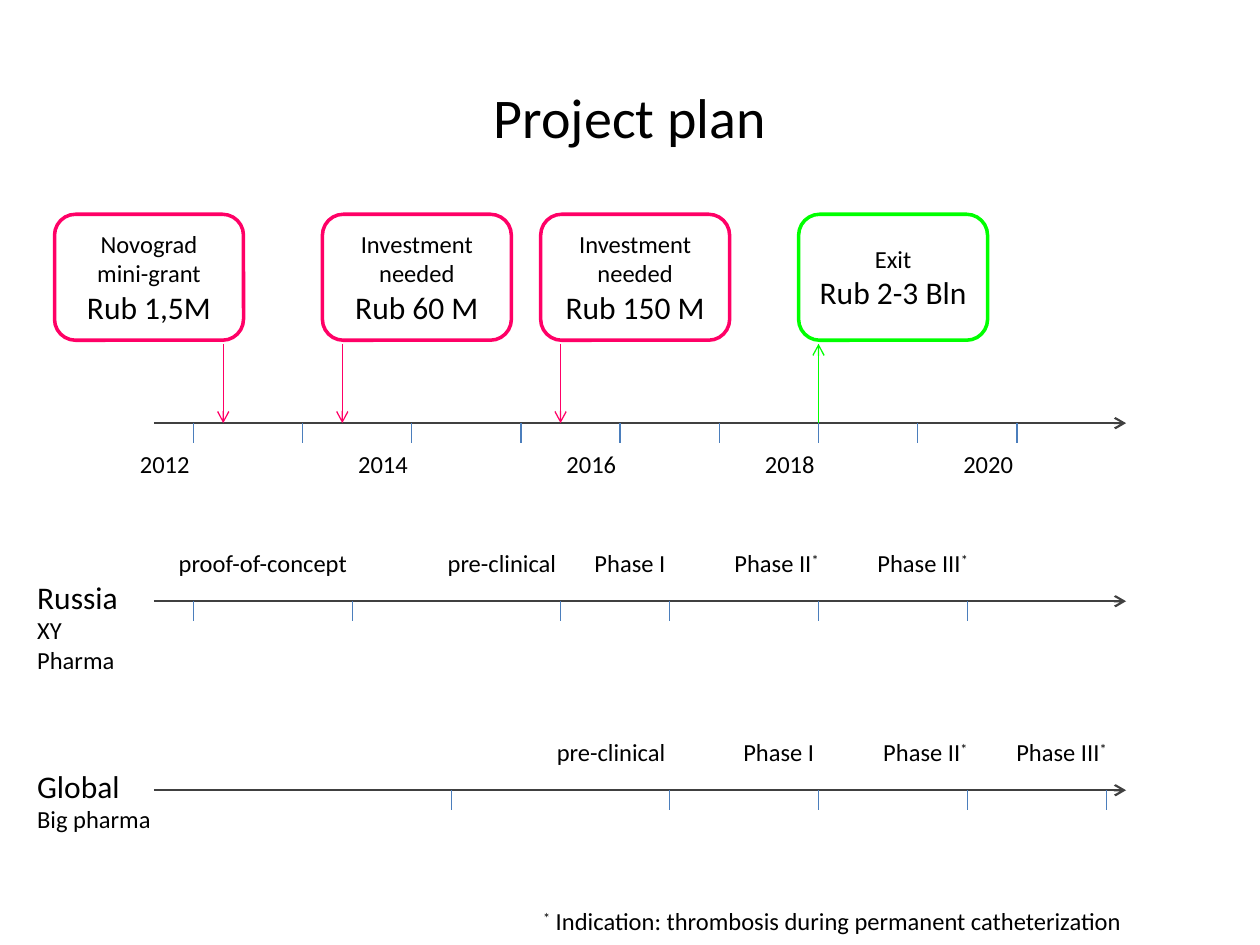
from dataclasses import dataclass

from lxml.etree import SubElement
from pptx import Presentation
from pptx.dml.color import RGBColor
from pptx.enum.shapes import MSO_CONNECTOR, MSO_SHAPE
from pptx.enum.text import MSO_ANCHOR, MSO_AUTO_SIZE, PP_ALIGN
from pptx.oxml.ns import qn
from pptx.util import Cm, Inches, Pt

BLACK, GREY, BLUE = "000000", "404040", "4B7EBC"
PINK, GREEN = "FF0066", "00FF00"
LEFT, RIGHT, TICK = 3.1, 22.7, 0.4
TIME, BOX_TOP, BOX_W, BOX_H = 8.53, 4.32, 3.81, 2.54
WIDTHS = {"proof-of-concept": 3.96, "pre-clinical": 2.72, "Phase I": 1.96,
          "Phase II*": 2.33, "Phase III*": 2.44}


@dataclass
class Deal:
    col: float
    stem: float
    head: str
    sum: str
    hue: str = PINK
    out: bool = False


@dataclass
class Track:
    row: float
    name: str
    firm: str
    start: float
    width: float
    steps: dict[float, str]


DEALS = [
    Deal(1.1, 4.5, "Novograd mini-grant", "Rub 1,5M"),
    Deal(6.5, 6.9, "Investment needed", "Rub 60 M"),
    Deal(10.9, 11.3, "Investment needed", "Rub 150 M"),
    Deal(16.1, 16.5, "Exit", "Rub 2-3 Bln", GREEN, True),
]
TRACKS = [
    Track(12.12, "Russia", "XY Pharma", 3.9, 2.6,
          {7.1: "proof-of-concept", 11.3: "pre-clinical", 13.5: "Phase I",
           16.5: "Phase II*", 19.5: "Phase III*"}),
    Track(15.93, "Global", "Big pharma", 9.1, 2.82,
          {13.5: "pre-clinical", 16.5: "Phase I", 19.5: "Phase II*",
           22.3: "Phase III*"}),
]


def tint(hue: str) -> RGBColor:
    """Turn a hex string into a colour."""
    return RGBColor.from_string(hue)


def write(frame, rows: list[tuple[str, int]], align=PP_ALIGN.LEFT) -> None:
    """Fill a frame with sized paragraphs, raising each asterisk."""
    for i, (text, size) in enumerate(rows):
        para = frame.paragraphs[0] if i == 0 else frame.add_paragraph()
        para.alignment = align
        para.font.size, para.font.name = Pt(size), "Calibri"
        para.font.color.rgb = tint(BLACK)
        body, star, rest = text.partition("*")
        for part in filter(None, (body, star, rest)):
            run = para.add_run()
            run.text = part
            if part == "*":
                run._r.get_or_add_rPr().set("baseline", "30000")


def label(slide, x: float, y: float, w: float, rows, align=PP_ALIGN.LEFT) -> None:
    """Place unwrapped text on the centimetre grid."""
    box = slide.shapes.add_textbox(Cm(x), Cm(y), Cm(w), Cm(0.86 * len(rows)))
    box.text_frame.word_wrap = False
    box.text_frame.auto_size = MSO_AUTO_SIZE.SHAPE_TO_FIT_TEXT
    write(box.text_frame, rows, align)


def rule(slide, x: float, y: float, end: tuple[float, float], hue: str,
         width: float = 0.75, arrow: bool = False) -> None:
    """Draw a straight line, with an open arrowhead if asked."""
    line = slide.shapes.add_connector(
        MSO_CONNECTOR.STRAIGHT, Cm(x), Cm(y), Cm(end[0]), Cm(end[1]))
    line.line.color.rgb, line.line.width = tint(hue), Pt(width)
    props = line._element.spPr
    if arrow:
        SubElement(props.find(qn("a:ln")), qn("a:tailEnd"), type="arrow")
    SubElement(props, qn("a:effectLst"))


def axis(slide, row: float, ticks: list[float]) -> None:
    """Draw an arrowed axis with ticks below it."""
    rule(slide, LEFT, row, (RIGHT, row), GREY, 1.25, True)
    for col in ticks:
        rule(slide, col, row, (col, row + TICK), BLUE)


def card(slide, deal: Deal) -> None:
    """Draw a funding box and the arrow between it and the time axis."""
    box = slide.shapes.add_shape(MSO_SHAPE.ROUNDED_RECTANGLE, Cm(deal.col),
                                 Cm(BOX_TOP), Cm(BOX_W), Cm(BOX_H))
    box.shadow.inherit = False
    box.fill.background()
    box.line.color.rgb, box.line.width = tint(deal.hue), Pt(2)
    box.text_frame.word_wrap = True
    box.text_frame.vertical_anchor = MSO_ANCHOR.MIDDLE
    write(box.text_frame, [(deal.head, 14), (deal.sum, 18)], PP_ALIGN.CENTER)
    top = BOX_TOP + BOX_H + 0.07
    tail, tip = (TIME, top) if deal.out else (top, TIME)
    rule(slide, deal.stem, tail, (deal.stem, tip), deal.hue, arrow=True)


def lane(slide, track: Track) -> None:
    """Draw one market's axis with each step ending at its tick."""
    axis(slide, track.row, [track.start, *track.steps])
    label(slide, 0.5, track.row - 0.6, track.width,
          [(track.name, 18), (track.firm, 14)])
    for col, step in track.steps.items():
        over = 0.32 if "*" in step else 0.18
        wide = WIDTHS[step]
        label(slide, col + over - wide, track.row - 1.2, wide,
              [(step, 14)], PP_ALIGN.CENTER)


def main() -> None:
    """Build the project plan slide."""
    deck = Presentation()
    deck.slide_width, deck.slide_height = Inches(10), Inches(7.5)
    slide = deck.slides.add_slide(deck.slide_layouts[6])
    title = slide.shapes.add_textbox(Cm(1.27), Cm(0.76), Cm(22.86), Cm(3.18))
    title.text_frame.word_wrap = True
    title.text_frame.vertical_anchor = MSO_ANCHOR.MIDDLE
    write(title.text_frame, [("Project plan", 32)], PP_ALIGN.CENTER)
    years = [3.9 + 2.2 * i for i in range(4)] + [12.5 + 2 * i for i in range(5)]
    axis(slide, TIME, years)
    for i, col in enumerate(years[::2]):
        label(slide, col - 1.33, TIME + TICK, 1.52, [(str(2012 + 2 * i), 14)])
    for deal in DEALS:
        card(slide, deal)
    for track in TRACKS:
        lane(slide, track)
    note = "* Indication: thrombosis during permanent catheterization"
    label(slide, 10.7, 18.14, 12.27, [(note, 14)])
    deck.save("out.pptx")


if __name__ == "__main__":
    main()
